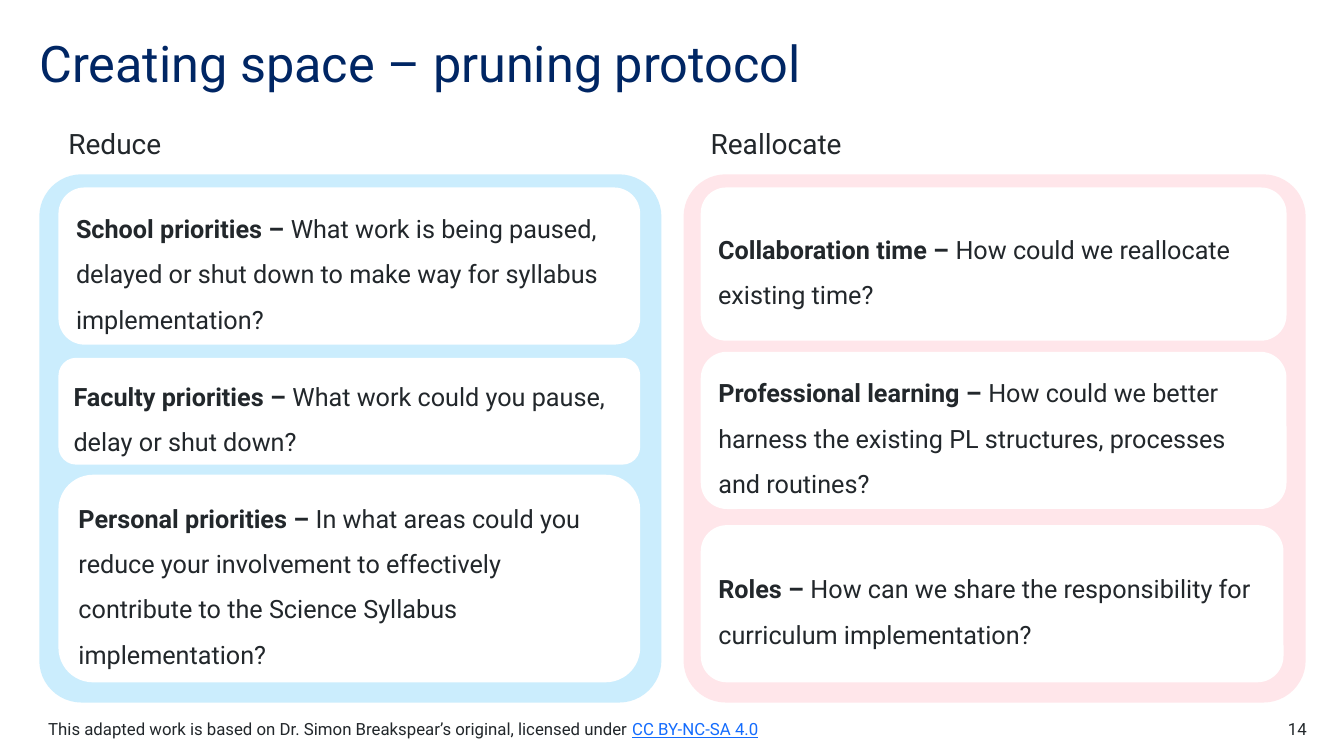
from dataclasses import dataclass

from pptx import Presentation
from pptx.dml.color import RGBColor
from pptx.enum.shapes import MSO_SHAPE
from pptx.enum.text import MSO_ANCHOR, PP_ALIGN
from pptx.util import Inches, Pt

ROUND = MSO_SHAPE.ROUNDED_RECTANGLE
TOP, MIDDLE = MSO_ANCHOR.TOP, MSO_ANCHOR.MIDDLE
LEFT, RIGHT = PP_ALIGN.LEFT, PP_ALIGN.RIGHT


@dataclass(frozen=True)
class Theme:
    font: str = "Roboto"
    navy: str = "002664"
    ink: str = "22272B"
    link: str = "146CFD"
    white: str = "FFFFFF"
    blue: str = "CBEDFD"
    pink: str = "FFE6EA"
    title: int = 36
    head: int = 20
    body: int = 18
    small: int = 12


THEME = Theme()


@dataclass(frozen=True)
class Box:
    left: float
    top: float
    width: float
    height: float

    def place(self) -> tuple:
        return tuple(map(Inches, (self.left, self.top, self.width, self.height)))


@dataclass(frozen=True)
class Run:
    text: str
    size: int
    color: str = THEME.ink
    bold: bool = False
    under: bool = False


@dataclass(frozen=True)
class Card:
    top: float
    width: float
    height: float
    label: str
    question: str


@dataclass(frozen=True)
class Column:
    head: str
    left: float
    inner: float
    color: str
    curve: float
    cards: tuple


COLUMNS = (
    Column("Reduce", 0.39, 0.58, THEME.blue, 0.08, (
        Card(1.86, 5.77, 1.56, "School priorities – ",
             "What work is being paused, delayed or shut down to make way "
             "for syllabus implementation?"),
        Card(3.55, 5.77, 1.06, "Faculty priorities – ",
             "What work could you pause, delay or shut down?"),
        Card(4.71, 5.77, 2.06, "Personal priorities – ",
             "In what areas could you reduce your involvement to effectively "
             "contribute to the Science Syllabus implementation?"),
    )),
    Column("Reallocate", 6.78, 6.95, THEME.pink, 0.08, (
        Card(1.86, 5.81, 1.52, "Collaboration time – ",
             "How could we reallocate existing time?"),
        Card(3.49, 5.81, 1.56, "Professional learning – ",
             "How could we better harness the existing PL structures, "
             "processes and routines?"),
        Card(5.21, 5.78, 1.56, "Roles – ",
             "How can we share the responsibility for curriculum "
             "implementation?"),
    )),
)


def write(shape, runs: tuple, space: float = 1.0, align=LEFT,
          anchor=TOP, flush: bool = False) -> None:
    frame = shape.text_frame
    frame.word_wrap = True
    frame.vertical_anchor = anchor
    if flush:
        frame.margin_left = frame.margin_right = 0
        frame.margin_top = frame.margin_bottom = 0
    para = frame.paragraphs[0]
    para.alignment = align
    para.line_spacing = space
    for item in runs:
        run = para.add_run()
        run.text = item.text
        font = run.font
        font.name = THEME.font
        font.size = Pt(item.size)
        font.bold = item.bold
        font.underline = item.under
        font.color.rgb = RGBColor.from_string(item.color)


def add_text(slide, box: Box, *runs: Run, **style) -> None:
    write(slide.shapes.add_textbox(*box.place()), runs, **style)


def add_panel(slide, box: Box, color: str, curve: float = 0.1667):
    panel = slide.shapes.add_shape(ROUND, *box.place())
    panel.adjustments[0] = curve
    panel.shadow.inherit = False
    panel.fill.solid()
    panel.fill.fore_color.rgb = RGBColor.from_string(color)
    panel.line.fill.background()
    return panel


def add_column(slide, col: Column) -> None:
    add_panel(slide, Box(col.left, 1.73, 6.17, 5.24), col.color, col.curve)
    add_text(slide, Box(col.inner, 1.21, 5.77, 0.44), Run(col.head, THEME.head))
    for card in col.cards:
        box = Box(col.inner, card.top, card.width, card.height)
        runs = (Run(card.label, THEME.body, bold=True),
                Run(card.question, THEME.body))
        write(add_panel(slide, box, THEME.white), runs, space=1.5, anchor=MIDDLE)


def main() -> None:
    deck = Presentation()
    deck.slide_width, deck.slide_height = Inches(13.33), Inches(7.5)
    slide = deck.slides.add_slide(deck.slide_layouts[6])
    add_text(slide, Box(0.39, 0.39, 11.02, 0.6),
             Run("Creating space – pruning protocol", THEME.title, THEME.navy),
             space=0.9, flush=True)
    for col in COLUMNS:
        add_column(slide, col)
    add_text(slide, Box(0.38, 7.08, 7.59, 0.3),
             Run("This adapted work is based on Dr. Simon Breakspear’s original, "
                 "licensed under ", THEME.small),
             Run("CC BY-NC-SA 4.0", THEME.small, THEME.link, under=True))
    add_text(slide, Box(12.17, 7.13, 0.79, 0.2), Run("14", THEME.small),
             align=RIGHT, flush=True)
    deck.save("out.pptx")


if __name__ == "__main__":
    main()
